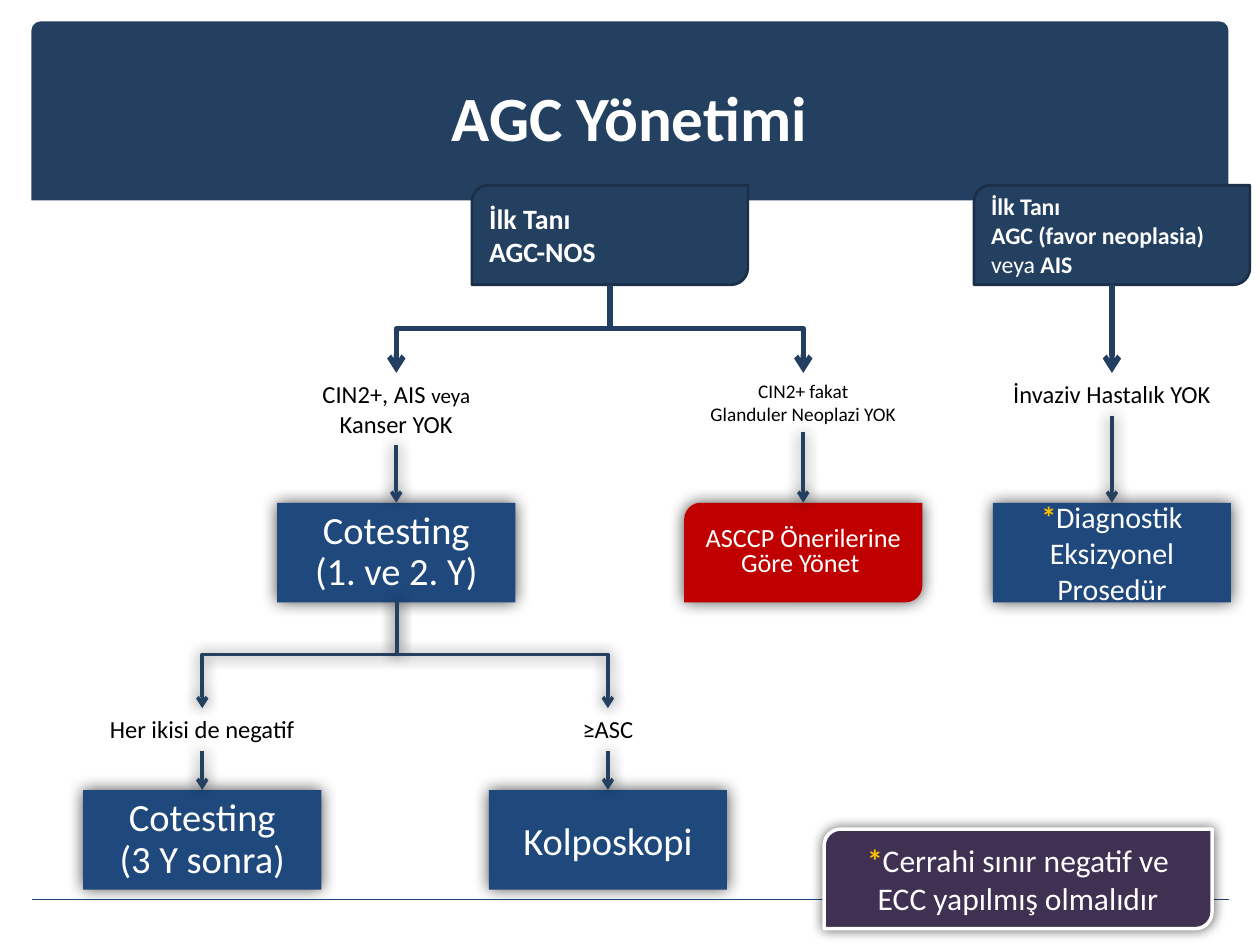
import pptx
import pptx.util
import pptx.dml.color
import pptx.enum.shapes
import pptx.enum.text
import pptx.oxml.ns
from lxml import etree

Inches = pptx.util.Inches
Pt = pptx.util.Pt
SHAPE = pptx.enum.shapes.MSO_SHAPE
CONNECTOR = pptx.enum.shapes.MSO_CONNECTOR
ALIGN = pptx.enum.text.PP_ALIGN
ANCHOR = pptx.enum.text.MSO_ANCHOR
qn = pptx.oxml.ns.qn

COLORS = {
    "navy": "244061", "navy_edge": "1B2F48", "branch": "223E60",
    "blue": "1F497D", "red": "C00000", "purple": "403152",
    "star": "FFC000", "white": "FFFFFF", "black": "000000",
}
NODE_W, NODE_H = 1.89, 0.79
NODE_SHADOW, ARROW_SHADOW, NOTE_SHADOW = (70, 9.4), (65, 8.7), (60, 7.1)
STAR = ("*", {"color": "star", "bold": True})


def rgb(name):
    """Return the named colour."""
    return pptx.dml.color.RGBColor.from_string(COLORS[name])


def apply(target, values):
    """Set every format value on the target."""
    for key, value in values.items():
        setattr(target, key, value)


def add_shadow(effects, strength):
    """Add a centred black glow of the given opacity and blur."""
    opacity, blur = strength
    glow = etree.SubElement(effects, qn("a:outerShdw"), blurRad=str(Pt(blur)),
                            dist="0", dir="0", algn="ctr", rotWithShape="0")
    ink = etree.SubElement(glow, qn("a:srgbClr"), val=COLORS["black"])
    etree.SubElement(ink, qn("a:alpha"), val=str(opacity * 1000))


def write(shape, lines, size, color="white", bold=False, align=ALIGN.CENTER,
          spacing=1.0, wrap=True, anchor=ANCHOR.MIDDLE):
    """Write lines, each a string or a list of (text, overrides) runs."""
    frame = shape.text_frame
    apply(frame, {"word_wrap": wrap, "vertical_anchor": anchor})
    for index, line in enumerate(lines):
        paragraph = frame.add_paragraph() if index else frame.paragraphs[0]
        apply(paragraph, {"alignment": align, "line_spacing": spacing})
        for text, changes in [(line, {})] if isinstance(line, str) else line:
            look = {"size": size, "color": color, "bold": bold, **changes}
            run = paragraph.add_run()
            run.text = text
            apply(run.font, {"name": "Calibri", "size": Pt(look["size"]),
                             "bold": look["bold"]})
            run.font.color.rgb = rgb(look["color"])


def add_block(slide, box, fill, kind=SHAPE.RECTANGLE, edge=None, shadow=None):
    """Add a filled shape; edge is a colour name and a width."""
    block = slide.shapes.add_shape(kind, *map(Inches, box))
    block.shadow.inherit = False
    block.fill.solid()
    block.fill.fore_color.rgb = rgb(fill)
    if edge:
        block.line.color.rgb, block.line.width = rgb(edge[0]), Pt(edge[1])
    else:
        block.line.fill.background()
    if shadow:
        add_shadow(block._element.spPr.find(qn("a:effectLst")), shadow)
    return block


def add_node(slide, center, top, lines, size, fill="blue",
             kind=SHAPE.RECTANGLE, spacing=1.0):
    """Add an outcome box centred on a column."""
    box = (center - NODE_W / 2, top, NODE_W, NODE_H)
    node = add_block(slide, box, fill, kind, shadow=NODE_SHADOW)
    write(node, lines, size, spacing=spacing)


def add_diagnosis(slide, box, lines, size):
    """Add a first-diagnosis box."""
    diagnosis = add_block(slide, box, "navy", SHAPE.ROUND_2_DIAG_RECTANGLE,
                          ("navy_edge", 1.5))
    write(diagnosis, lines, size, bold=True, align=ALIGN.LEFT)


def add_condition(slide, center, top, width, height, lines, size=14):
    """Add an unboxed condition centred on a column."""
    box = (center - width / 2, top, width, height)
    condition = slide.shapes.add_textbox(*map(Inches, box))
    write(condition, lines, size, "black", wrap=False, anchor=ANCHOR.TOP)


def add_line(slide, start, end, color="navy", width=2, arrow=True,
             shadow=ARROW_SHADOW):
    """Join two points, bending halfway down when they are in two columns."""
    (x1, y1), (x2, y2) = start, end
    bent = arrow and x1 != x2
    if bent:
        run, drop = abs(x2 - x1), y2 - y1
        mid_x, mid_y = (x1 + x2) / 2, (y1 + y2) / 2
        left, right = mid_x - drop / 2, mid_x + drop / 2
        top, bottom = mid_y - run / 2, mid_y + run / 2
        if x2 > x1:
            left, right = right, left
        ends = (left, top, right, bottom)
    else:
        ends = (x1, y1, x2, y2)
    line = slide.shapes.add_connector(
        CONNECTOR.ELBOW if bent else CONNECTOR.STRAIGHT, *map(Inches, ends))
    line.line.color.rgb, line.line.width = rgb(color), Pt(width)
    properties = line._element.spPr
    if bent:
        angle = 270 if x2 > x1 else 90
        properties.find(qn("a:xfrm")).set("rot", str(angle * 60000))
    if arrow:
        etree.SubElement(line.get_or_add_ln(), qn("a:tailEnd"), type="arrow")
    effects = etree.SubElement(properties, qn("a:effectLst"))
    if shadow:
        add_shadow(effects, shadow)


def add_header(slide, box):
    """Add the title band and its title."""
    x, y, w, h = box
    band = add_block(slide, box, "navy", SHAPE.ROUND_2_SAME_RECTANGLE)
    band.adjustments[0], band.adjustments[1] = 0.05, 0
    title_box = (x + 0.08, y + 0.13, w - 0.17, h - 0.17)
    title = slide.shapes.add_textbox(*map(Inches, title_box))
    write(title, ["AGC Yönetimi"], 36, bold=True)


def add_nos_tree(slide, box):
    """Add the AGC-NOS diagnosis with its two outcomes."""
    x, y, w, h = box
    root, clear, cin = x + 2.64, x + NODE_W / 2, x + w - NODE_W / 2
    fork, condition, outcome = y + 0.79, y + 1.49, y + h - NODE_H
    add_diagnosis(slide, (root - 1.095, y, 2.19, 0.79),
                  ["İlk Tanı", "AGC-NOS"], 16)
    add_condition(slide, clear, condition, 1.39, 0.57,
                  [[("CIN2+, AIS ", {}), ("veya", {"size": 12})], "Kanser YOK"])
    add_condition(slide, cin, condition, 1.69, 0.47,
                  ["CIN2+ fakat", "Glanduler Neoplazi YOK"], 11)
    add_node(slide, clear, outcome, ["Cotesting", "(1. ve 2. Y)"], 22,
             spacing=0.9)
    add_node(slide, cin, outcome, ["ASCCP Önerilerine Göre Yönet "], 15, "red",
             SHAPE.ROUND_2_DIAG_RECTANGLE, 0.8)
    for center, height in ((clear, 0.57), (cin, 0.47)):
        add_line(slide, (root, fork), (center, condition), "branch", 3,
                 shadow=None)
        add_line(slide, (center, condition + height), (center, outcome))


def add_cotesting_tree(slide, box):
    """Add the two results that follow from cotesting."""
    x, y, w, h = box
    root, condition, outcome = x + 2.49, y + 0.85, y + h - NODE_H
    results = (
        (x + NODE_W / 2, 1.68, "Her ikisi de negatif",
         ["Cotesting", "(3 Y sonra)"], 0.9),
        (x + w - NODE_W / 2, 0.61, "≥ASC", ["Kolposkopi"], 1.0),
    )
    for center, width, finding, action, spacing in results:
        add_condition(slide, center, condition, width, 0.34, [finding])
        add_node(slide, center, outcome, action, 22, spacing=spacing)
        add_line(slide, (root, y), (center, condition))
        add_line(slide, (center, condition + 0.34), (center, outcome))


def add_neoplasia_column(slide, box):
    """Add the favor neoplasia diagnosis and its procedure."""
    x, y, w, h = box
    center, condition, outcome = x + w / 2, y + 1.49, y + h - NODE_H
    add_diagnosis(slide, (x, y, w, 0.79),
                  ["İlk Tanı", "AGC (favor neoplasia)",
                   [("veya", {"bold": False}), (" AIS", {})]], 13.6)
    add_condition(slide, center, condition, 1.8, 0.34,
                  ["İnvaziv Hastalık YOK"])
    add_node(slide, center, outcome,
             [[STAR, ("Diagnostik Eksizyonel Prosedür", {})]], 17.1)
    add_line(slide, (center, y + 0.79), (center, condition), "branch", 3,
             shadow=None)
    add_line(slide, (center, condition + 0.34), (center, outcome))


def add_note(slide, box):
    """Add the starred footnote."""
    note = add_block(slide, box, "purple", SHAPE.ROUND_2_DIAG_RECTANGLE,
                     ("white", 2), NOTE_SHADOW)
    write(note, [[STAR, ("Cerrahi sınır negatif ve ECC yapılmış olmalıdır",
                         {})]], 18)


def main():
    """Build and save the slide."""
    deck = pptx.Presentation()
    apply(deck, {"slide_width": Inches(10), "slide_height": Inches(7.5)})
    slide = deck.slides.add_slide(deck.slide_layouts[6])
    add_header(slide, (0.25, 0.17, 9.5, 1.42))
    add_line(slide, (0.25, 7.14), (9.75, 7.14), "blue", 1, False, None)
    add_nos_tree(slide, (2.2, 1.47, 5.12, 3.31))
    add_cotesting_tree(slide, (0.66, 4.77, 5.11, 2.29))
    add_neoplasia_column(slide, (7.73, 1.47, 2.19, 3.31))
    add_note(slide, (6.54, 6.58, 3.08, 0.79))
    deck.save("out.pptx")


if __name__ == "__main__":
    main()
